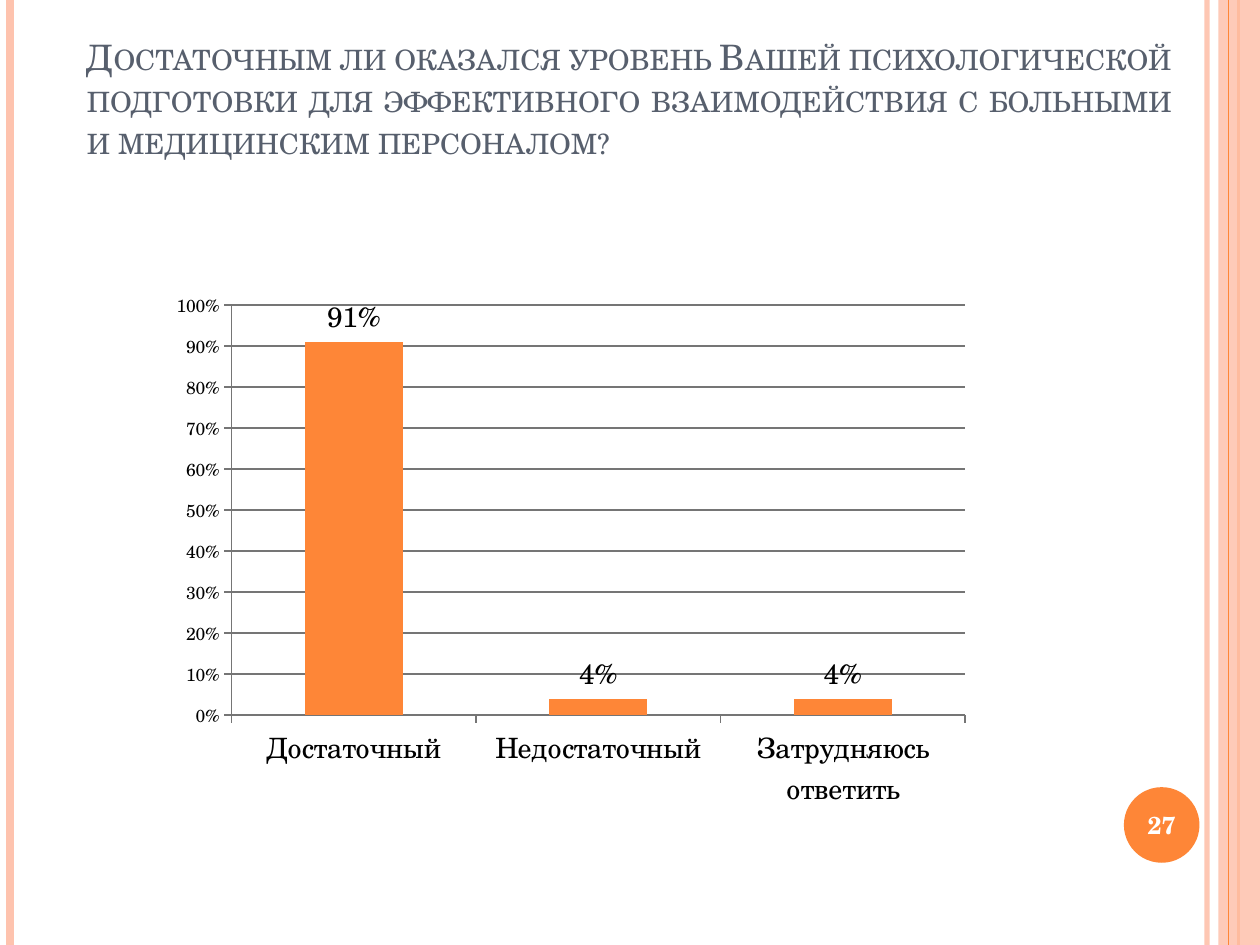
from lxml import etree
from pptx import Presentation
from pptx import util as u
from pptx.chart.data import CategoryChartData
from pptx.dml.color import RGBColor
from pptx.enum import chart as charts, shapes, text
from pptx.oxml import parse_xml
from pptx.oxml.ns import nsdecls, qn

WIDTH, HEIGHT = u.Inches(10), u.Inches(7.5)
FONT = "TeX Gyre Schola"
ORANGE = RGBColor(0xFE, 0x86, 0x37)
PEACH = RGBColor(0xFE, 0xC3, 0xAE)
SLATE = RGBColor(0x57, 0x5F, 0x6D)
GRAY = RGBColor(0x75, 0x75, 0x75)
BLACK = RGBColor(0, 0, 0)
WHITE = RGBColor(255, 255, 255)


def share(left, top, width, height):
    """Turn shares of the slide into a box of lengths."""
    return (int(left * WIDTH), int(top * HEIGHT),
            int(width * WIDTH), int(height * HEIGHT))


def set_opacity(shape, percent):
    """Make the solid colour of a shape's fill or line partly transparent."""
    color = shape._element.spPr.find(".//" + qn("a:srgbClr"))
    etree.SubElement(color, qn("a:alpha"), val=str(percent * 1000))


def write(frame, words, *, size, color, align, anchor, bold=False, small_caps=False):
    """Write one formatted paragraph into a text frame."""
    frame.word_wrap = True
    frame.vertical_anchor = anchor
    paragraph = frame.paragraphs[0]
    paragraph.alignment = align
    run = paragraph.add_run()
    run.text = words
    run.font.name, run.font.size, run.font.bold = FONT, u.Pt(size), bold
    run.font.color.rgb = color
    if small_caps:
        run._r.get_or_add_rPr().set("cap", "small")


def add_solid(slide, kind, box, color):
    """Add a flat shape without outline."""
    shape = slide.shapes.add_shape(kind, *box)
    shape.shadow.inherit = False
    shape.fill.solid()
    shape.fill.fore_color.rgb = color
    shape.line.fill.background()
    return shape


def add_stripe(slide, position, color, weight):
    """Add a full-height vertical line at a share of the slide's width."""
    x = int(position * WIDTH)
    line = slide.shapes.add_connector(shapes.MSO_CONNECTOR.STRAIGHT, x, 0, x, HEIGHT)
    line.line.color.rgb = color
    line.line.width = u.Pt(weight)
    etree.SubElement(line._element.spPr, qn("a:effectLst"))
    return line


def add_borders(slide, band):
    """Draw the stripes and the band along the slide's edges."""
    set_opacity(add_stripe(slide, 0.958, PEACH, 3), 93)
    add_stripe(slide, 0.008, PEACH, 4.5)
    add_stripe(slide, 0.983, ORANGE, 1.5)
    set_opacity(add_solid(slide, shapes.MSO_SHAPE.RECTANGLE, band, PEACH), 87)
    add_stripe(slide, 0.975, ORANGE, 0.75)


def add_page_badge(slide, box, number):
    """Add a round badge with the page number."""
    badge = add_solid(slide, shapes.MSO_SHAPE.OVAL, box, ORANGE)
    frame = badge.text_frame
    frame.margin_left = frame.margin_right = 0
    write(frame, number, size=14, color=WHITE, bold=True,
          align=text.PP_ALIGN.CENTER, anchor=text.MSO_ANCHOR.MIDDLE)


def add_title(slide, box, words):
    """Place and fill the title placeholder."""
    title = slide.shapes.title
    title.left, title.top, title.width, title.height = box
    write(title.text_frame, words, size=20, color=SLATE, small_caps=True,
          align=text.PP_ALIGN.JUSTIFY, anchor=text.MSO_ANCHOR.TOP)
    title.text_frame.auto_size = text.MSO_AUTO_SIZE.NONE


def set_font(font, size):
    """Give chart text its typeface, size and colour."""
    font.name, font.size, font.bold = FONT, u.Pt(size), False
    font.color.rgb = BLACK


def set_plot_area(chart, **shares):
    """Fix the inner plot area at shares of the chart's size."""
    parts = "".join(f'<c:{key} val="{value}"/>' for key, value in shares.items())
    layout = parse_xml(
        f'<c:layout {nsdecls("c")}><c:manualLayout><c:layoutTarget val="inner"/>'
        f'<c:xMode val="edge"/><c:yMode val="edge"/>{parts}</c:manualLayout></c:layout>')
    plot_area = chart._chartSpace.chart.plotArea
    for old in plot_area.findall(qn("c:layout")):
        plot_area.remove(old)
    plot_area.insert(0, layout)


def add_answers_chart(slide, box, answers):
    """Add the column chart of answer shares."""
    data = CategoryChartData(number_format="0%")
    data.categories = list(answers)
    data.add_series("Series 1", list(answers.values()))
    chart = slide.shapes.add_chart(
        charts.XL_CHART_TYPE.COLUMN_CLUSTERED, *box, data).chart
    chart.has_legend = chart.has_title = False
    set_font(chart.font, 10)
    set_plot_area(chart, x=0.09, y=0.04, w=0.89, h=0.76)

    values = chart.value_axis
    values.minimum_scale, values.maximum_scale, values.major_unit = 0, 1, 0.1
    values.tick_labels.number_format = "0%"
    values.tick_labels.number_format_is_linked = False
    values.has_major_gridlines = True
    set_font(values.tick_labels.font, 10)
    set_font(chart.category_axis.tick_labels.font, 16)
    for axis in (values, chart.category_axis):
        axis.major_tick_mark = charts.XL_TICK_MARK.OUTSIDE
    for line in (values.format.line, chart.category_axis.format.line,
                 values.major_gridlines.format.line):
        line.color.rgb = GRAY
        line.width = u.Pt(0.75)

    plot = chart.plots[0]
    plot.gap_width = 150
    plot.vary_by_categories = False
    series = plot.series[0]
    series.format.fill.solid()
    series.format.fill.fore_color.rgb = ORANGE
    labels = series.data_labels
    labels.show_value = True
    labels.position = charts.XL_LABEL_POSITION.OUTSIDE_END
    labels.number_format = "0%"
    labels.number_format_is_linked = False
    set_font(labels.font, 16)


def main():
    """Build and save the slide."""
    presentation = Presentation()
    presentation.slide_width, presentation.slide_height = WIDTH, HEIGHT
    slide = presentation.slides.add_slide(presentation.slide_layouts[5])
    add_borders(slide, share(0.967, 0, 0.033, 1))
    add_page_badge(slide, share(0.892, 0.833, 0.06, 0.08), "27")
    add_title(slide, share(0.059, 0.031, 0.881, 0.148),
              "Достаточным ли оказался уровень Вашей психологической подготовки "
              "для эффективного взаимодействия с больными и медицинским персоналом?")
    add_answers_chart(slide, share(0.125, 0.3, 0.654, 0.571), {
        "Достаточный": 0.91, "Недостаточный": 0.04, "Затрудняюсь ответить": 0.04})
    presentation.save("out.pptx")


if __name__ == "__main__":
    main()
